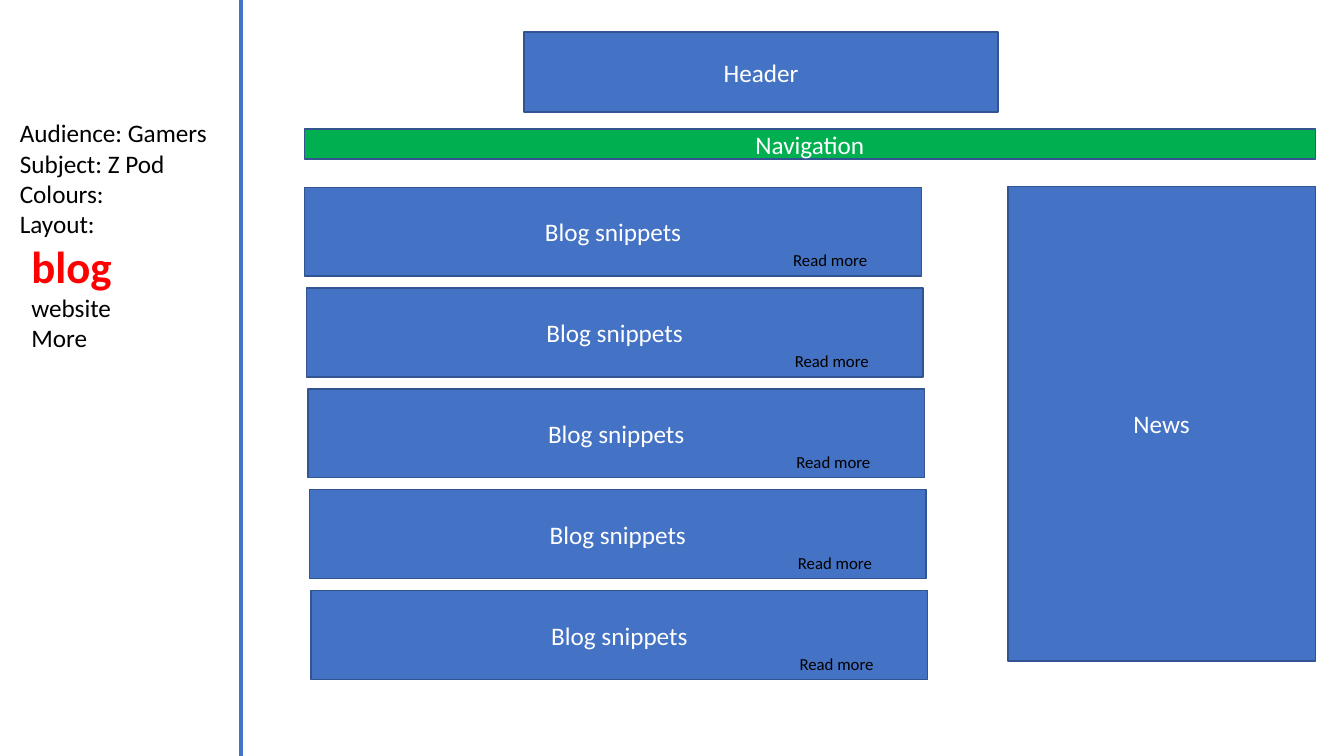
"""Build a wireframe slide for a gaming blog: brief on the left, page layout on the right."""
from dataclasses import dataclass

from lxml import etree
from pptx import Presentation
from pptx.dml.color import RGBColor
from pptx.enum.shapes import MSO_CONNECTOR, MSO_SHAPE
from pptx.enum.text import MSO_ANCHOR, PP_ALIGN
from pptx.oxml.ns import qn
from pptx.util import Cm, Pt

RECTANGLE = MSO_SHAPE.RECTANGLE
STRAIGHT = MSO_CONNECTOR.STRAIGHT
LEFT, CENTER = PP_ALIGN.LEFT, PP_ALIGN.CENTER
MIDDLE = MSO_ANCHOR.MIDDLE


@dataclass(frozen=True)
class Theme:
    font: str = "Calibri"
    blue: RGBColor = RGBColor(0x44, 0x72, 0xC4)
    outline: RGBColor = RGBColor(0x32, 0x54, 0x91)
    green: RGBColor = RGBColor(0x00, 0xB0, 0x50)
    red: RGBColor = RGBColor(0xFF, 0x00, 0x00)
    black: RGBColor = RGBColor(0x00, 0x00, 0x00)
    white: RGBColor = RGBColor(0xFF, 0xFF, 0xFF)
    body: int = 18
    small: int = 12
    large: int = 32


theme = Theme()


def write(shape, text, size=theme.body, color=theme.black, bold=False, align=LEFT, indent=0):
    frame = shape.text_frame
    frame.word_wrap = True
    paragraph = frame.add_paragraph() if frame.text else frame.paragraphs[0]
    paragraph.alignment = align
    if indent:
        paragraph._p.get_or_add_pPr().set("marL", str(Cm(indent)))
    run = paragraph.add_run()
    run.text = text
    run.font.name = theme.font
    run.font.size = Pt(size)
    run.font.bold = bold
    run.font.color.rgb = color


def add_block(shapes, text, left, top, width, height, fill=theme.blue):
    block = shapes.add_shape(RECTANGLE, Cm(left), Cm(top), Cm(width), Cm(height))
    block.shadow.inherit = False
    block.fill.solid()
    block.fill.fore_color.rgb = fill
    block.line.color.rgb = theme.outline
    block.line.width = Pt(1)
    block.text_frame.vertical_anchor = MIDDLE
    write(block, text, color=theme.white, align=CENTER)


presentation = Presentation()
presentation.slide_width = Cm(33.87)
presentation.slide_height = Cm(19.05)
slide = presentation.slides.add_slide(presentation.slide_layouts[6])

brief = slide.shapes.add_textbox(Cm(0.25), Cm(2.84), Cm(5.54), Cm(6.25))
for line in ("Audience: Gamers", "Subject: Z Pod", "Colours:", "Layout:"):
    write(brief, line)
write(brief, "blog", size=theme.large, color=theme.red, bold=True, indent=0.29)
for line in ("website", "More"):
    write(brief, line, indent=0.29)

divider = slide.shapes.add_connector(STRAIGHT, Cm(6.07), Cm(0), Cm(6.07), Cm(19.05))
divider.line.color.rgb = theme.blue
divider.line.width = Pt(3)
etree.SubElement(divider._element.spPr, qn("a:effectLst"))

add_block(slide.shapes, "Header", 13.21, 0.81, 11.94, 2.01)
add_block(slide.shapes, "News", 25.4, 4.7, 7.75, 11.96)
add_block(slide.shapes, "Navigation", 7.67, 3.25, 25.48, 0.76, fill=theme.green)

for index in range(5):
    left = 7.68 + 0.04 * index
    top = 4.72 + 2.54 * index
    snippet = slide.shapes.add_group_shape()
    add_block(snippet.shapes, "Blog snippets", left, top, 15.54, 2.24)
    read_more = snippet.shapes.add_textbox(Cm(left + 12.06), Cm(top + 1.46), Cm(3.86), Cm(0.77))
    write(read_more, "Read more", size=theme.small)

presentation.save("out.pptx")
